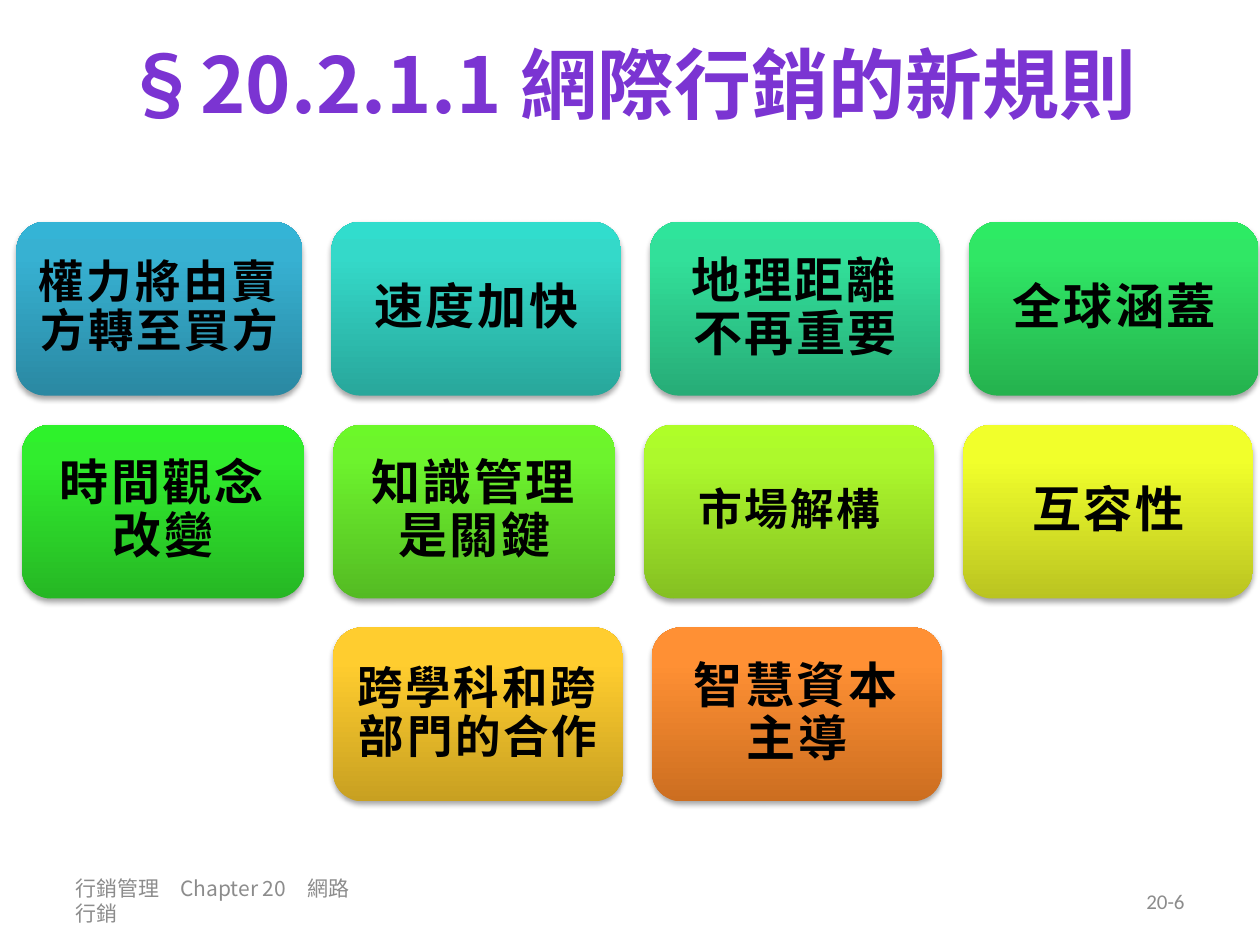
from lxml import etree
from pptx import Presentation
from pptx.dml.color import RGBColor
from pptx.enum import shapes, text
from pptx.oxml import parse_xml
from pptx.oxml.ns import nsdecls, qn
from pptx.util import Inches, Pt

CJK, LATIN = "Noto Sans CJK SC", "Calibri"
COLORS = {"title": "7B34D2", "footer": "8C8C8C", "card": "000000"}
TITLE = [("§20.2.1.1 ", CJK), ("網際行銷的新規則", LATIN)]
FOOTER, PAGE = "行銷管理　Chapter 20　網路行銷", "20-6"
ROWS = [
    [("權力將由賣方轉至買方", 2.27, 26, ("2A88A2", "37B1D2", "34B4D6")),
     ("速度加快", 2.3, 28, ("28A79B", "34D9C9", "31DDCD")),
     ("地理距離不再重要", 2.3, 28, ("27AC77", "32E09A", "2FE49B")),
     ("全球涵蓋", 2.3, 28, ("25B24E", "30E765", "2DEB64"))],
    [("時間觀念改變", 2.24, 28, ("26B724", "31ED2E", "2EF22B")),
     ("知識管理是關鍵", 2.24, 28, ("54BB23", "6DF32D", "6CF829")),
     ("市場解構", 2.3, 25, ("85C022", "ADF92C", "AFFE28")),
     ("互容性", 2.3, 28, ("BAC421", "F1FF2B", "F1FF2C"))],
    [("跨學科和跨部門的合作", 2.3, 26, ("C8A021", "FFCD2F", "FFCD31")),
     ("智慧資本主導", 2.3, 28, ("CC6E20", "FF9034", "FF9136"))],
]
STOPS = (0, 80, 100)
CENTER, TOP, HEIGHT, GAP = 5.06, 1.76, 1.38, 0.23


def style(font, size, color, name, bold=False):
    font.size, font.bold, font.name = Pt(size), bold, name
    font.color.rgb = RGBColor.from_string(COLORS[color])
    etree.SubElement(font._element, qn("a:ea")).set("typeface", CJK)


def add_runs(shape, runs, size, color, align, bold=False, spacing=0):
    tf = shape.text_frame
    tf.word_wrap = True
    tf.vertical_anchor = text.MSO_ANCHOR.MIDDLE
    p = tf.paragraphs[0]
    p.alignment = align
    for words, name in runs:
        r = p.add_run()
        r.text = words
        style(r.font, size, color, name, bold)
        if spacing:
            r.font._element.set("spc", str(spacing))
    return p


def add_label(s, box, *args, **kwargs):
    add_runs(s.shapes.add_textbox(*map(Inches, box)), *args, **kwargs)


def add_card(s, x, y, words, width, size, colors):
    sp = s.shapes.add_shape(shapes.MSO_SHAPE.ROUNDED_RECTANGLE,
                            *map(Inches, (x, y, width, HEIGHT)))
    sp.line.fill.background()
    stops = "".join(f'<a:gs pos="{pos * 1000}"><a:srgbClr val="{c}"/></a:gs>'
                    for pos, c in zip(STOPS, colors))
    sp._element.spPr.insert(2, parse_xml(
        f'<a:gradFill {nsdecls("a")} rotWithShape="1"><a:gsLst>{stops}</a:gsLst>'
        '<a:lin ang="16200000" scaled="0"/></a:gradFill>'))
    sp.shadow.inherit = False
    sp._element.spPr.find(qn("a:effectLst")).append(parse_xml(
        f'<a:outerShdw {nsdecls("a")} blurRad="40000" dist="23000" dir="5400000" '
        'rotWithShape="0"><a:srgbClr val="000000"><a:alpha val="35000"/>'
        '</a:srgbClr></a:outerShdw>'))
    tf = sp.text_frame
    inset = Inches(round(size * 0.004, 2))
    tf.margin_left = tf.margin_right = tf.margin_top = tf.margin_bottom = inset
    p = add_runs(sp, [(words, LATIN)], size, "card", text.PP_ALIGN.CENTER,
                 bold=True, spacing=150)
    p.line_spacing = 0.9


def main():
    prs = Presentation()
    prs.slide_width, prs.slide_height = Inches(10), Inches(7.5)
    s = prs.slides.add_slide(prs.slide_layouts[6])
    add_label(s, (0.5, 0, 9, 1.31), TITLE, 44, "title", text.PP_ALIGN.CENTER, bold=True)
    add_label(s, (0.5, 6.95, 2.45, 0.4), [(FOOTER, CJK)], 12, "footer", text.PP_ALIGN.LEFT)
    add_label(s, (7.17, 6.95, 2.33, 0.4), [(PAGE, LATIN)], 12, "footer", text.PP_ALIGN.RIGHT)
    for i, row in enumerate(ROWS):
        total = sum(card[1] for card in row) + GAP * (len(row) - 1)
        x = CENTER - total / 2
        for card in row:
            add_card(s, x, TOP + i * (HEIGHT + GAP), *card)
            x += card[1] + GAP
    prs.save("out.pptx")


if __name__ == "__main__":
    main()
